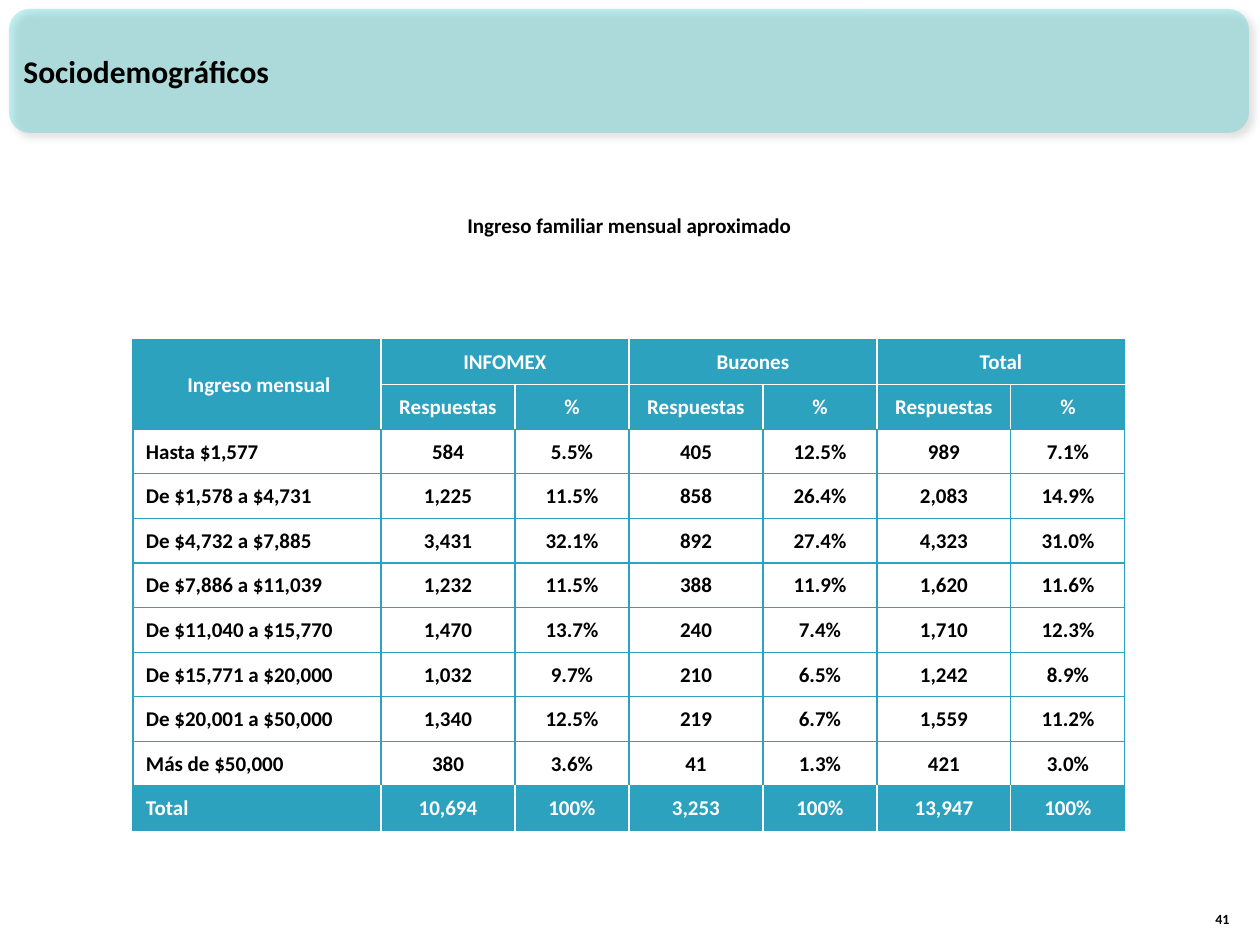
from lxml import etree
from pptx import Presentation
from pptx.dml.color import RGBColor
from pptx.enum.shapes import MSO_SHAPE
from pptx.enum.text import MSO_ANCHOR, PP_ALIGN
from pptx.oxml import parse_xml
from pptx.oxml.ns import nsdecls, qn
from pptx.util import Emu, Pt

EMU_PER_PX = 914400 / 126
COLORS = {"banner": "33CCCC", "teal": "2DA2BF", "white": "FFFFFF", "black": "000000"}
FONT = {"name": "Calibri", "bold": True}

COLUMN_WIDTHS = [248] + [134, 114] * 3
TABLE_HEIGHT = 491
HEADER_ROWS = 2
ROWS = [
    ["Ingreso mensual", "INFOMEX", "", "Buzones", "", "Total", ""],
    [""] + ["Respuestas", "%"] * 3,
    ["Hasta $1,577", "584", "5.5%", "405", "12.5%", "989", "7.1%"],
    ["De $1,578 a $4,731", "1,225", "11.5%", "858", "26.4%", "2,083", "14.9%"],
    ["De $4,732 a $7,885", "3,431", "32.1%", "892", "27.4%", "4,323", "31.0%"],
    ["De $7,886 a $11,039", "1,232", "11.5%", "388", "11.9%", "1,620", "11.6%"],
    ["De $11,040 a $15,770", "1,470", "13.7%", "240", "7.4%", "1,710", "12.3%"],
    ["De $15,771 a $20,000", "1,032", "9.7%", "210", "6.5%", "1,242", "8.9%"],
    ["De $20,001 a $50,000", "1,340", "12.5%", "219", "6.7%", "1,559", "11.2%"],
    ["Más de $50,000", "380", "3.6%", "41", "1.3%", "421", "3.0%"],
    ["Total", "10,694", "100%", "3,253", "100%", "13,947", "100%"],
]


def px(length):
    return Emu(round(length * EMU_PER_PX))


def rgb(name):
    return RGBColor.from_string(COLORS[name])


def write(text_frame, text, size, color="black", align=PP_ALIGN.LEFT):
    paragraph = text_frame.paragraphs[0]
    paragraph.text = text
    paragraph.alignment = align
    for name, value in {**FONT, "size": Pt(size)}.items():
        setattr(paragraph.font, name, value)
    paragraph.font.color.rgb = rgb(color)


def add_text(slide, box, text, size, align=PP_ALIGN.LEFT, anchor=MSO_ANCHOR.TOP):
    text_frame = slide.shapes.add_textbox(*map(px, box)).text_frame
    text_frame.word_wrap = True
    text_frame.vertical_anchor = anchor
    write(text_frame, text, size, align=align)


def add_banner(slide, box):
    shape = slide.shapes.add_shape(MSO_SHAPE.ROUNDED_RECTANGLE, *map(px, box))
    shape.fill.solid()
    shape.fill.fore_color.rgb = rgb("banner")
    shape.line.fill.background()
    # Translucent fill with a soft shadow to the lower right
    properties = shape._element.spPr
    fill_color = properties.find(qn("a:solidFill")).find(qn("a:srgbClr"))
    etree.SubElement(fill_color, qn("a:alpha"), val="30000")
    properties.append(parse_xml(
        f'<a:effectLst {nsdecls("a")}>'
        f'<a:outerShdw blurRad="{Pt(4)}" dist="{Pt(3)}" dir="2700000" algn="tl" rotWithShape="0">'
        f'<a:srgbClr val="{COLORS["black"]}"><a:alpha val="40000"/></a:srgbClr>'
        '</a:outerShdw></a:effectLst>'))


def add_border(cell, side, color):
    line = etree.SubElement(cell._tc.get_or_add_tcPr(), qn(f"a:ln{side}"), w=str(Pt(0.75)))
    fill = etree.SubElement(line, qn("a:solidFill"))
    etree.SubElement(fill, qn("a:srgbClr"), val=COLORS[color])


def vertical_color(is_filled, edge):
    return "white" if is_filled and 0 < edge < len(COLUMN_WIDTHS) else "teal"


def horizontal_color(edge, column):
    return "white" if edge == 1 and column > 0 else "teal"


def format_cell(cell, row, column):
    is_header = row < HEADER_ROWS
    is_filled = is_header or row == len(ROWS) - 1
    is_label = column == 0 and not is_header

    # Borders are white between filled cells
    add_border(cell, "L", vertical_color(is_filled, column))
    add_border(cell, "R", vertical_color(is_filled, column + cell.span_width))
    add_border(cell, "T", horizontal_color(row, column))
    add_border(cell, "B", horizontal_color(row + cell.span_height, column))
    if is_filled:
        cell.fill.solid()
        cell.fill.fore_color.rgb = rgb("teal")
    else:
        cell.fill.background()

    left = 13 if is_label else 5 if column == 0 else 1
    layout = {"margin_left": px(left), "margin_right": px(1), "margin_top": px(1),
              "margin_bottom": 0, "vertical_anchor": MSO_ANCHOR.MIDDLE}
    for name, value in layout.items():
        setattr(cell, name, value)
    write(cell.text_frame, ROWS[row][column], 12, "white" if is_filled else "black",
          PP_ALIGN.LEFT if is_label else PP_ALIGN.CENTER)


def add_income_table(slide, left, top):
    table = slide.shapes.add_table(
        len(ROWS), len(COLUMN_WIDTHS), px(left), px(top),
        px(sum(COLUMN_WIDTHS)), px(TABLE_HEIGHT)).table
    table.first_row = table.horz_banding = False
    for column, width in zip(table.columns, COLUMN_WIDTHS):
        column.width = px(width)
    for row in table.rows:
        row.height = px(TABLE_HEIGHT / len(ROWS))

    # Merged headings
    table.cell(0, 0).merge(table.cell(1, 0))
    for column in (1, 3, 5):
        table.cell(0, column).merge(table.cell(0, column + 1))

    for row in range(len(ROWS)):
        for column in range(len(COLUMN_WIDTHS)):
            format_cell(table.cell(row, column), row, column)


def main():
    presentation = Presentation()
    presentation.slide_width, presentation.slide_height = px(1260), px(945)
    slide = presentation.slides.add_slide(presentation.slide_layouts[6])

    # Heading
    add_banner(slide, (9, 9, 1240, 124))
    add_text(slide, (11, 12, 1155, 118), "Sociodemográficos", 18, anchor=MSO_ANCHOR.MIDDLE)

    # Income table with its title
    add_text(slide, (102, 206, 1055, 38), "Ingreso familiar mensual aproximado", 12,
             align=PP_ALIGN.CENTER)
    add_income_table(slide, 133, 340)

    # Slide number
    add_text(slide, (1192, 884, 50, 50), "41", 8, PP_ALIGN.RIGHT, MSO_ANCHOR.BOTTOM)

    presentation.save("out.pptx")


if __name__ == "__main__":
    main()
